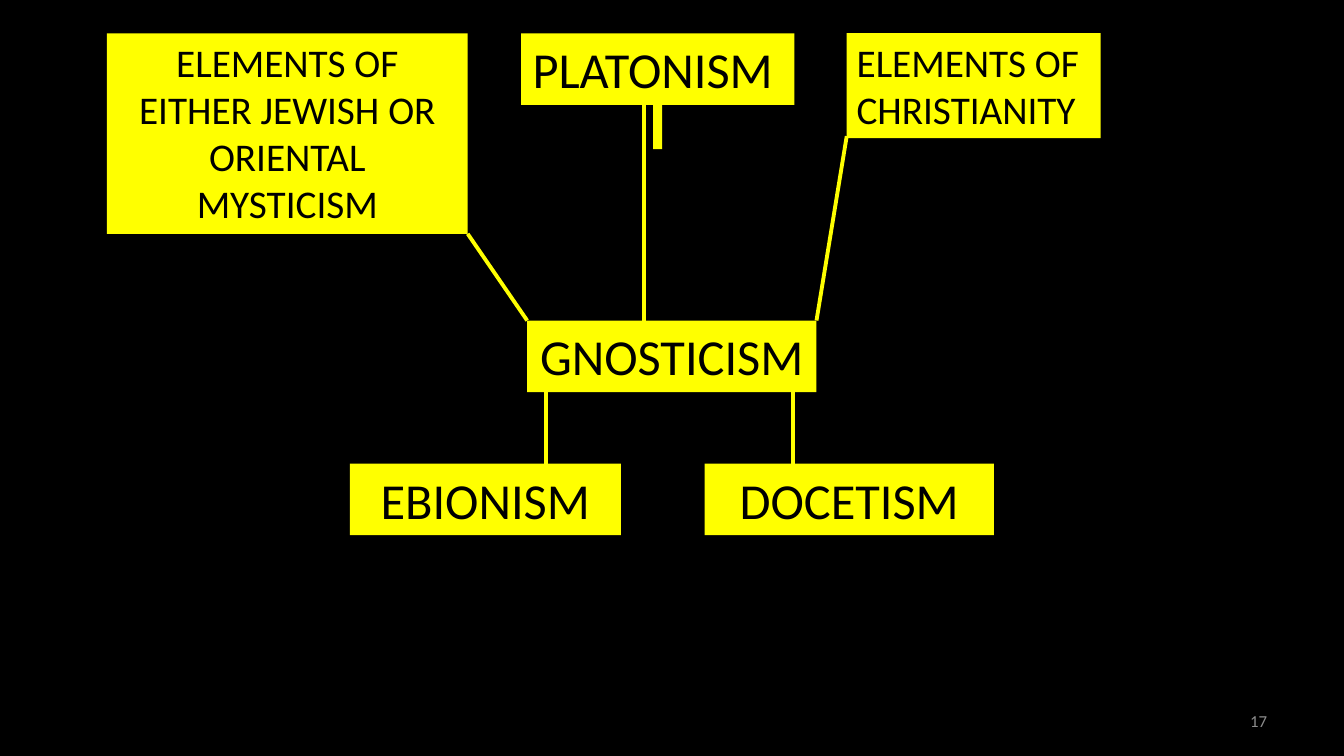
import pptx
import pptx.dml.color
import pptx.enum.shapes
import pptx.enum.text
import pptx.oxml.ns
import pptx.util
from lxml import etree

BLACK = pptx.dml.color.RGBColor(0x00, 0x00, 0x00)
YELLOW = pptx.dml.color.RGBColor(0xFF, 0xFF, 0x00)
GREY = pptx.dml.color.RGBColor(0x8C, 0x8C, 0x8C)
FONT = "Calibri"
ALIGN = pptx.enum.text.PP_ALIGN
CELL = pptx.util.Inches(0.1)
COLUMNS, ROWS = 133.33, 75
TOP_ROW, CORE_ROW, BRANCH_ROW = 3.3, 31.8, 46
TERM_ROWS = 7.1


def grid(*cells):
    return [round(cell * CELL) for cell in cells]


def write_lines(frame, lines, size, color, align):
    for index, line in enumerate(lines):
        paragraph = frame.paragraphs[0] if index == 0 else frame.add_paragraph()
        paragraph.alignment = align
        run = paragraph.add_run()
        run.text = line
        run.font.name = FONT
        run.font.size = pptx.util.Pt(size)
        run.font.color.rgb = color


def add_block(slide, column, row, columns, rows):
    block = slide.shapes.add_shape(
        pptx.enum.shapes.MSO_SHAPE.RECTANGLE, *grid(column, row, columns, rows))
    block.shadow.inherit = False
    block.fill.solid()
    block.fill.fore_color.rgb = YELLOW
    block.line.fill.background()
    return block


def add_belief(slide, cells, lines, size=36, align=ALIGN.CENTER):
    belief = add_block(slide, *cells)
    frame = belief.text_frame
    frame.word_wrap = True
    frame.auto_size = pptx.enum.text.MSO_AUTO_SIZE.SHAPE_TO_FIT_TEXT
    frame.vertical_anchor = pptx.enum.text.MSO_ANCHOR.TOP
    write_lines(frame, lines, size, BLACK, align)
    return belief


def add_link(slide, start, end):
    link = slide.shapes.add_connector(
        pptx.enum.shapes.MSO_CONNECTOR.STRAIGHT, *grid(*start, *end))
    link.line.color.rgb = YELLOW
    link.line.width = pptx.util.Pt(2.75)
    properties = link._element.find(pptx.oxml.ns.qn("p:spPr"))
    etree.SubElement(properties, pptx.oxml.ns.qn("a:effectLst"))


def add_page_number(slide, number):
    box = slide.shapes.add_textbox(*grid(95.6, 69.5, 31.1, 4))
    frame = box.text_frame
    frame.word_wrap = True
    frame.vertical_anchor = pptx.enum.text.MSO_ANCHOR.MIDDLE
    write_lines(frame, [number], 12, GREY, ALIGN.RIGHT)


def main():
    deck = pptx.Presentation()
    deck.slide_width, deck.slide_height = grid(COLUMNS, ROWS)
    slide = deck.slides.add_slide(deck.slide_layouts[6])
    slide.background.fill.solid()
    slide.background.fill.fore_color.rgb = BLACK

    platonism = add_belief(slide, (51.7, TOP_ROW, 27.1, TERM_ROWS), ["PLATONISM"])
    platonism.text_frame.margin_left = 0
    add_block(slide, 64.8, TOP_ROW + TERM_ROWS, 0.9, 4.4)
    add_belief(slide, (52.3, CORE_ROW, 28.7, TERM_ROWS), ["GNOSTICISM"])
    add_belief(slide, (10.6, TOP_ROW, 35.8, 19.9),
               ["ELEMENTS OF EITHER JEWISH OR ORIENTAL MYSTICISM"], 28)
    add_belief(slide, (84, TOP_ROW, 25.2, 10.4),
               ["ELEMENTS OF", "CHRISTIANITY"], 28, ALIGN.LEFT)
    add_belief(slide, (34.7, BRANCH_ROW, 26.9, TERM_ROWS), ["EBIONISM"])
    add_belief(slide, (69.9, BRANCH_ROW, 28.7, TERM_ROWS), ["DOCETISM"])

    add_link(slide, (46.4, 23.2), (52.3, CORE_ROW))
    add_link(slide, (84, 13.5), (81, CORE_ROW))
    add_link(slide, (63.9, TOP_ROW + TERM_ROWS), (63.9, CORE_ROW))
    add_link(slide, (54.2, 37.4), (54.2, BRANCH_ROW))
    add_link(slide, (78.7, 38.8), (78.7, 47.5))

    add_page_number(slide, "17")
    deck.save("out.pptx")


if __name__ == "__main__":
    main()
